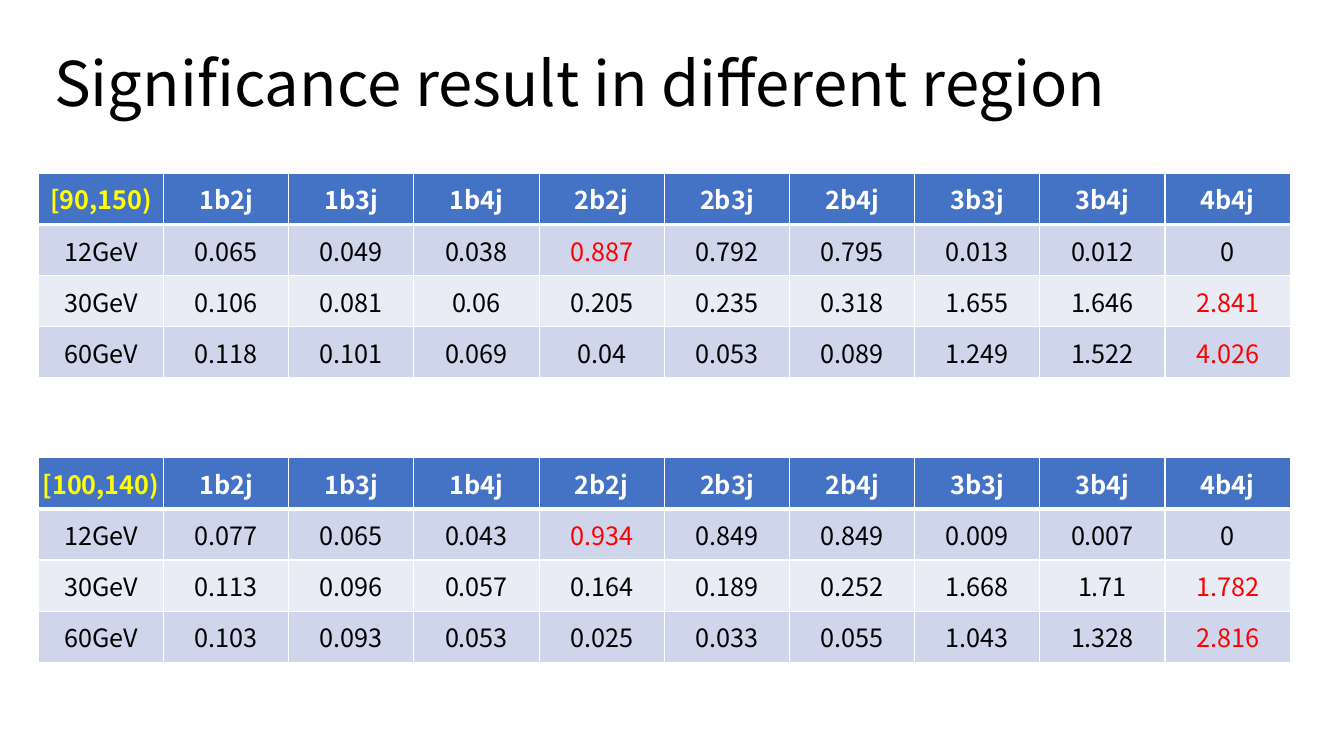
from lxml import etree
from pptx import Presentation
from pptx.dml.color import RGBColor
from pptx.enum.text import MSO_ANCHOR, PP_ALIGN
from pptx.oxml.ns import qn
from pptx.util import Inches, Pt

MIDDLE = MSO_ANCHOR.MIDDLE
CENTER = PP_ALIGN.CENTER

WHITE = RGBColor(0xFF, 0xFF, 0xFF)
BLACK = RGBColor(0x00, 0x00, 0x00)
RED = RGBColor(0xFF, 0x00, 0x00)
YELLOW = RGBColor(0xFF, 0xFF, 0x00)
HEADER_BLUE = RGBColor(0x44, 0x72, 0xC4)
BANDS = [RGBColor(0xCF, 0xD5, 0xEA), RGBColor(0xE9, 0xEB, 0xF5)]

REGIONS = ["1b2j", "1b3j", "1b4j", "2b2j", "2b3j", "2b4j", "3b3j", "3b4j", "4b4j"]
BEST_CELLS = {(1, 4), (2, 9), (3, 9)}
TABLES = [
    (1.72, [
        ["[90,150)"] + REGIONS,
        ["12GeV", "0.065", "0.049", "0.038", "0.887", "0.792", "0.795", "0.013", "0.012", "0"],
        ["30GeV", "0.106", "0.081", "0.06", "0.205", "0.235", "0.318", "1.655", "1.646", "2.841"],
        ["60GeV", "0.118", "0.101", "0.069", "0.04", "0.053", "0.089", "1.249", "1.522", "4.026"],
    ]),
    (4.54, [
        ["[100,140)"] + REGIONS,
        ["12GeV", "0.077", "0.065", "0.043", "0.934", "0.849", "0.849", "0.009", "0.007", "0"],
        ["30GeV", "0.113", "0.096", "0.057", "0.164", "0.189", "0.252", "1.668", "1.71", "1.782"],
        ["60GeV", "0.103", "0.093", "0.053", "0.025", "0.033", "0.055", "1.043", "1.328", "2.816"],
    ]),
]


class SlideBuilder:
    font = "Noto Sans CJK SC"

    def __init__(self, slide):
        self.slide = slide

    def style(self, p, size, color, bold=False):
        p.font.name = self.font
        p.font.size = Pt(size)
        p.font.bold = bold
        p.font.color.rgb = color

    def title(self, text, left, top, width, height):
        sp = self.slide.shapes.add_textbox(
            Inches(left), Inches(top), Inches(width), Inches(height))
        tf = sp.text_frame
        tf.word_wrap = True
        p = tf.paragraphs[0]
        p.text = text
        p.line_spacing = 0.9
        self.style(p, 44, BLACK)

    def borders(self, cell, row):
        widths = {"L": 1, "R": 1, "T": 3 if row == 1 else 1, "B": 3 if row == 0 else 1}
        tc_pr = cell._tc.get_or_add_tcPr()
        for i, (side, width) in enumerate(widths.items()):
            ln = etree.Element(qn(f"a:ln{side}"), w=str(Pt(width)))
            fill = etree.SubElement(ln, qn("a:solidFill"))
            etree.SubElement(fill, qn("a:srgbClr"), val=str(WHITE))
            tc_pr.insert(i, ln)

    def cell(self, cell, text, row, col):
        header = row == 0
        cell.fill.solid()
        cell.fill.fore_color.rgb = HEADER_BLUE if header else BANDS[(row - 1) % 2]
        cell.margin_left = cell.margin_right = 0
        cell.margin_top = cell.margin_bottom = 0
        cell.vertical_anchor = MIDDLE
        p = cell.text_frame.paragraphs[0]
        p.text = text
        p.alignment = CENTER
        if header:
            color = YELLOW if col == 0 else WHITE
        else:
            color = RED if (row, col) in BEST_CELLS else BLACK
        self.style(p, 18, color, header)
        self.borders(cell, row)

    def table(self, rows, left, top, width, height):
        table = self.slide.shapes.add_table(
            len(rows), len(rows[0]),
            Inches(left), Inches(top), Inches(width), Inches(height)).table
        for r, row in enumerate(rows):
            for c, text in enumerate(row):
                self.cell(table.cell(r, c), text, r, c)


def main():
    prs = Presentation()
    prs.slide_width = Inches(13.33)
    prs.slide_height = Inches(7.5)
    s = SlideBuilder(prs.slides.add_slide(prs.slide_layouts[6]))
    for top, rows in TABLES:
        s.table(rows, 0.38, top, 12.42, 2.03)
    s.title("Significance result in different region", 0.44, 0.48, 12.14, 0.84)
    prs.save("out.pptx")


if __name__ == "__main__":
    main()
